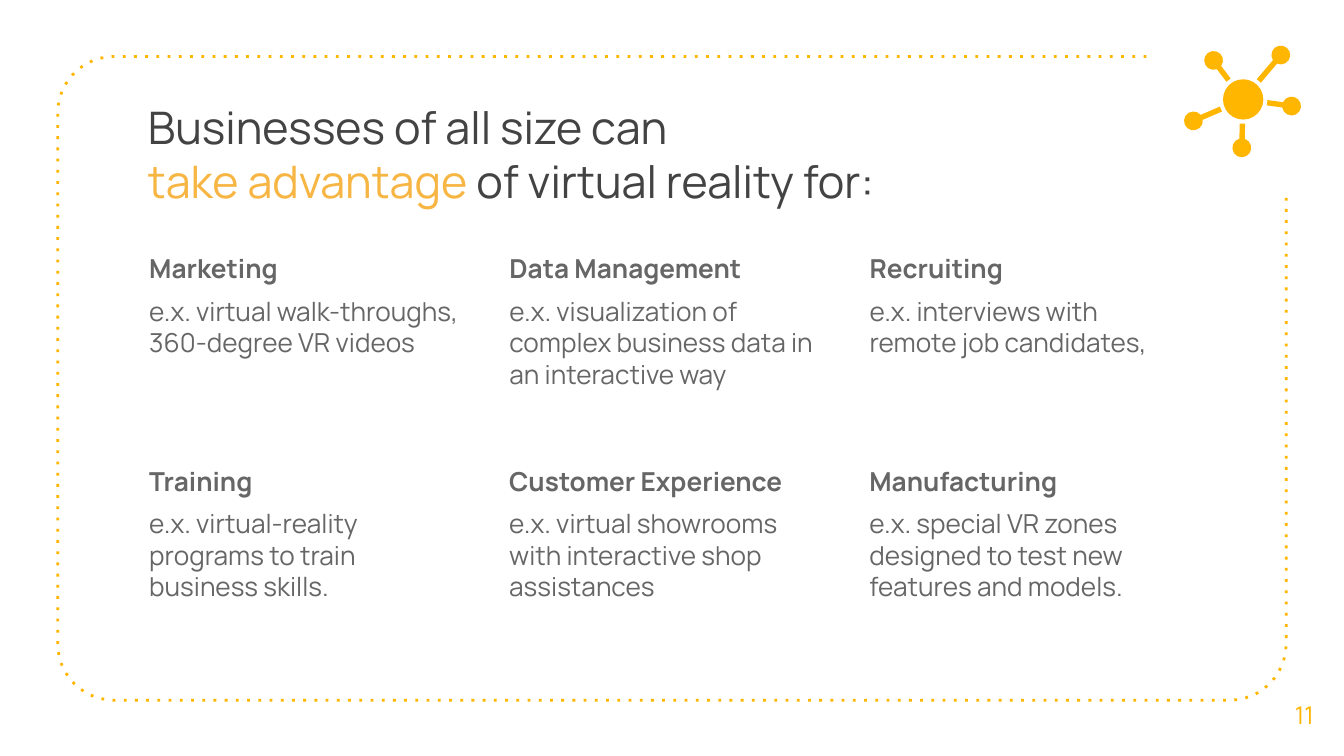
from math import asin, atan2, cos, radians, sin, tau
from lxml.etree import SubElement
from pptx import Presentation
from pptx.dml.color import RGBColor
from pptx.enum.shapes import MSO_SHAPE
from pptx.enum.text import MSO_ANCHOR, MSO_AUTO_SIZE, PP_ALIGN
from pptx.oxml.ns import qn
from pptx.util import Inches, Pt

FONT = "Manrope"
YELLOW, ORANGE, DARK, GRAY = "FFB600", "F7B643", "434343", "666666"

TITLE_LINES = [
    [("Businesses of all size can ", DARK)],
    [("take advantage ", ORANGE), ("of virtual reality for:", DARK)],
]
USES = [
    ("Marketing", "e.x. virtual walk-throughs, 360-degree VR videos"),
    ("Data Management", "e.x. visualization of complex business data in an interactive way"),
    ("Recruiting", "e.x. interviews with remote job candidates,"),
    ("Training", "e.x. virtual-reality programs to train business skills."),
    ("Customer Experience", "e.x. virtual showrooms with interactive shop assistances"),
    ("Manufacturing", "e.x. special VR zones designed to test new features and models."),
]
PAGE_NUMBER = "11"

COLUMNS = 3
CARD_LEFT, CARD_TOP, CARD_WIDTH, CARD_HEIGHT = 1.01, 1.78, 2.55, 1.62
COLUMN_STEP, ROW_STEP = 2.68, 1.58

FRAME_LEFT, FRAME_TOP, FRAME_RIGHT, FRAME_BOTTOM = 0.43, 0.42, 9.57, 5.21
FRAME_START, FRAME_END, CORNER = (8.53, 0.42), (9.57, 1.46), 0.42

HUB, HUB_RADIUS, SPOKE_GAP, SPOKE_HALF = (9.25, 0.74), 0.15, 0.18, 0.02
NODES = [(9.53, 0.41), (9.03, 0.45), (8.88, 0.9), (9.24, 1.1), (9.61, 0.79)]
NODE_RADIUS = 0.07
ARC_STEPS = 12


def color(value):
    return RGBColor.from_string(value)


def place(shape, left, top, width, height):
    box = {"left": left, "top": top, "width": width, "height": height}
    for name, value in box.items():
        setattr(shape, name, Inches(value))


def prepare_text(shape, anchor):
    frame = shape.text_frame
    settings = {"word_wrap": True, "auto_size": MSO_AUTO_SIZE.NONE, "vertical_anchor": anchor}
    settings.update({f"margin_{side}": Inches(0.1) for side in ("left", "top", "right", "bottom")})
    for name, value in settings.items():
        setattr(frame, name, value)
    return frame


def format_paragraph(paragraph, space_before=0, alignment=PP_ALIGN.LEFT):
    properties = paragraph._p.get_or_add_pPr()
    properties.set("marL", "0")
    properties.set("indent", "0")
    SubElement(properties, qn("a:buNone"))
    settings = {"alignment": alignment, "line_spacing": 1.0,
                "space_before": Pt(space_before), "space_after": Pt(0)}
    for name, value in settings.items():
        setattr(paragraph, name, value)


def add_run(paragraph, text, size, value, bold=False):
    run = paragraph.add_run()
    run.text = text
    for name, setting in {"name": FONT, "size": Pt(size), "bold": bold}.items():
        setattr(run.font, name, setting)
    run.font.color.rgb = color(value)


def arc(center, radius, start, sweep):
    angles = [start + sweep * step / ARC_STEPS for step in range(ARC_STEPS + 1)]
    return [(center[0] + radius * cos(angle), center[1] + radius * sin(angle)) for angle in angles]


def add_outline(slide, points, close):
    points = [(Inches(x), Inches(y)) for x, y in points]
    builder = slide.shapes.build_freeform(*points[0])
    builder.add_line_segments(points[1:], close=close)
    shape = builder.convert_to_shape()
    shape.shadow.inherit = False
    return shape


def fill_yellow(shape):
    shape.fill.solid()
    shape.fill.fore_color.rgb = color(YELLOW)
    shape.line.fill.background()


def add_frame(slide):
    left, right = FRAME_LEFT + CORNER, FRAME_RIGHT - CORNER
    top, bottom = FRAME_TOP + CORNER, FRAME_BOTTOM - CORNER
    points = [FRAME_START]
    for center, start in [((left, top), 270), ((left, bottom), 180), ((right, bottom), 90)]:
        points += arc(center, CORNER, radians(start), radians(-90))
    border = add_outline(slide, points + [FRAME_END], close=False)
    border.fill.background()
    border.line.color.rgb = color(YELLOW)
    border.line.width = Pt(1.5)
    SubElement(border.line._get_or_add_ln(), qn("a:prstDash")).set("val", "dot")


def add_network(slide):
    opening = asin(SPOKE_HALF / NODE_RADIUS)
    for node in NODES:
        outward = atan2(node[1] - HUB[1], node[0] - HUB[0])
        start = [HUB[0] + SPOKE_GAP * cos(outward), HUB[1] + SPOKE_GAP * sin(outward)]
        across = (-SPOKE_HALF * sin(outward), SPOKE_HALF * cos(outward))
        spoke_end = [(start[0] + side * across[0], start[1] + side * across[1]) for side in (1, -1)]
        head = arc(node, NODE_RADIUS, outward + tau / 2 + opening, tau - 2 * opening)
        fill_yellow(add_outline(slide, head + spoke_end, close=True))
    box = [HUB[0] - HUB_RADIUS, HUB[1] - HUB_RADIUS, 2 * HUB_RADIUS, 2 * HUB_RADIUS]
    hub = slide.shapes.add_shape(MSO_SHAPE.OVAL, *map(Inches, box))
    hub.shadow.inherit = False
    fill_yellow(hub)


def add_title(slide):
    title = slide.shapes.title
    place(title, 1, 0.64, 7.51, 0.94)
    paragraph = prepare_text(title, MSO_ANCHOR.TOP).paragraphs[0]
    format_paragraph(paragraph)
    for index, line in enumerate(TITLE_LINES):
        if index:
            paragraph.add_line_break()
        for text, value in line:
            add_run(paragraph, text, 24, value)


def add_uses(slide):
    bodies = list(slide.placeholders)[1:]
    while len(bodies) < len(USES):
        bodies.append(slide.shapes.add_textbox(0, 0, 0, 0))
    for index, (body, (heading, example)) in enumerate(zip(bodies, USES)):
        row, column = divmod(index, COLUMNS)
        place(body, CARD_LEFT + column * COLUMN_STEP, CARD_TOP + row * ROW_STEP,
              CARD_WIDTH, CARD_HEIGHT)
        frame = prepare_text(body, MSO_ANCHOR.TOP)
        format_paragraph(frame.paragraphs[0])
        add_run(frame.paragraphs[0], heading, 14, GRAY, bold=True)
        paragraph = frame.add_paragraph()
        format_paragraph(paragraph, space_before=6)
        add_run(paragraph, example, 14, GRAY)


def add_page_number(slide):
    box = slide.shapes.add_textbox(*map(Inches, (9.41, 5.02, 0.59, 0.6)))
    paragraph = prepare_text(box, MSO_ANCHOR.MIDDLE).paragraphs[0]
    format_paragraph(paragraph, alignment=PP_ALIGN.CENTER)
    add_run(paragraph, PAGE_NUMBER, 13, YELLOW)


def main():
    presentation = Presentation()
    presentation.slide_width = Inches(10)
    presentation.slide_height = Inches(10) * 9 // 16
    slide = presentation.slides.add_slide(presentation.slide_layouts.get_by_name("Comparison"))
    add_frame(slide)
    add_title(slide)
    add_uses(slide)
    add_page_number(slide)
    add_network(slide)
    presentation.save("out.pptx")


if __name__ == "__main__":
    main()
